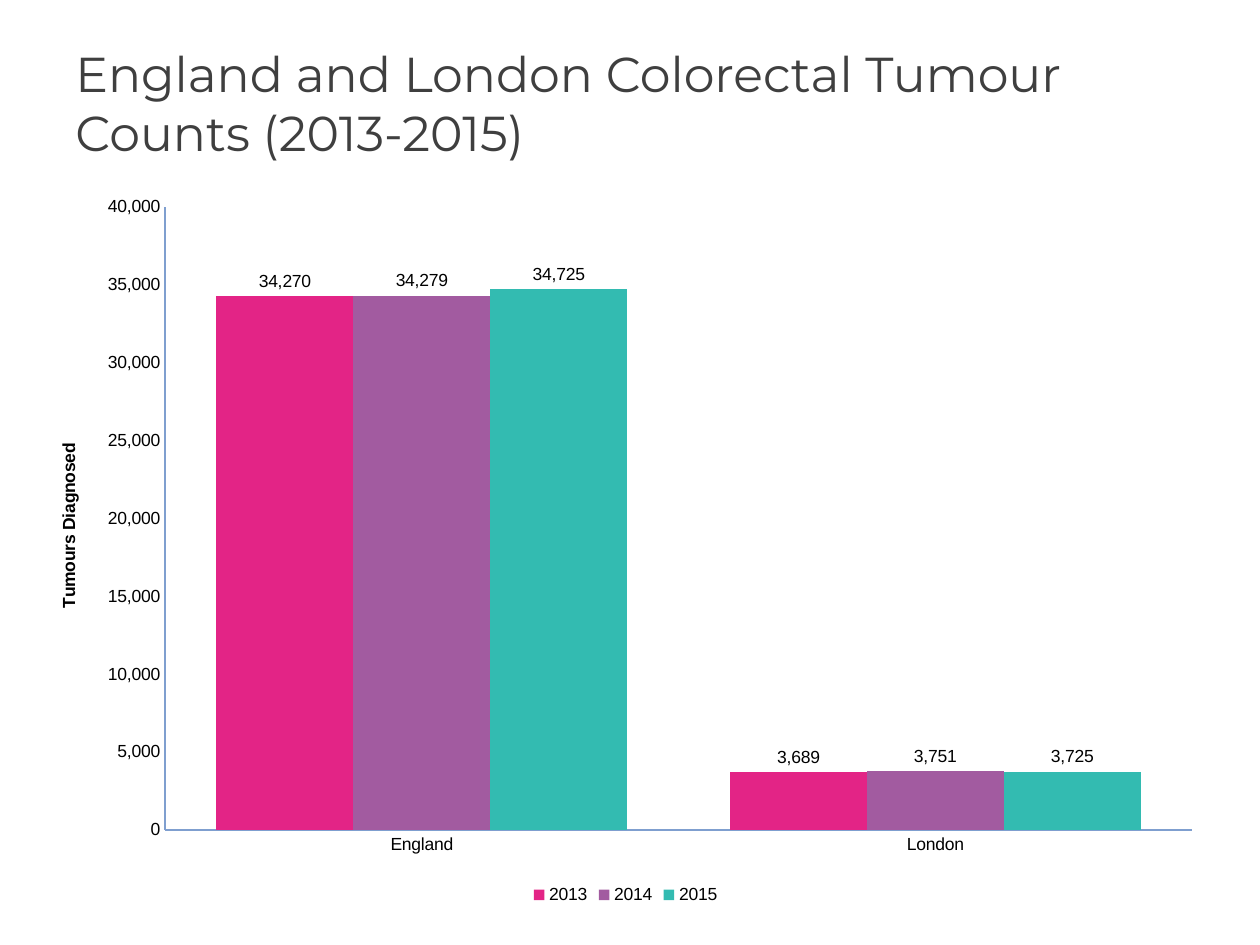
from lxml import etree
from pptx import Presentation
from pptx import util as u
from pptx.chart import data as chart_data
from pptx.dml import color
from pptx.enum import chart as chart_enum, text
from pptx.oxml import ns

TITLE = "England and London Colorectal Tumour Counts (2013-2015)"
AXIS_TITLE = "Tumours Diagnosed"
REGIONS = ["England", "London"]
COUNTS = [
    ("2013", (34270, 3689), "E32486"),
    ("2014", (34279, 3751), "A25BA0"),
    ("2015", (34725, 3725), "33BBB1"),
]
NUMBER_FORMAT = "#,##0"
AXIS_COLOUR = "7F9FCF"
TITLE_BOX = (1.27, 0.76, 22.86, 3.18)
CHART_BOX = (0.71, 3.73, 23.8, 14.61)
PLOT_AREA = {"x": 0.11, "y": 0.03, "w": 0.87, "h": 0.86}  # shares of the chart


def rgb(value):
    return color.RGBColor.from_string(value)


def place(box):
    return [u.Cm(length) for length in box]


def set_all(target, **values):
    for name, value in values.items():
        setattr(target, name, value)


def style_font(font, name, size, colour, bold=False):
    set_all(font, name=name, size=u.Pt(size), bold=bold)
    font.color.rgb = rgb(colour)


def fix_plot_area(chart):
    """Pin the inner plot area with a manual layout."""
    plot_area = chart._chartSpace.chart.plotArea
    for old in plot_area.findall(ns.qn("c:layout")):
        plot_area.remove(old)
    layout = etree.Element(ns.qn("c:layout"))
    manual = etree.SubElement(layout, ns.qn("c:manualLayout"))
    settings = {"layoutTarget": "inner", "xMode": "edge", "yMode": "edge", **PLOT_AREA}
    for tag, value in settings.items():
        etree.SubElement(manual, ns.qn("c:" + tag)).set("val", str(value))
    plot_area.insert(0, layout)


def add_title(slide):
    frame = slide.shapes.add_textbox(*place(TITLE_BOX)).text_frame
    set_all(frame, word_wrap=True, vertical_anchor=text.MSO_ANCHOR.TOP)
    paragraph = frame.paragraphs[0]
    paragraph.space_before = u.Pt(6)
    run = paragraph.add_run()
    run.text = TITLE
    style_font(run.font, "Montserrat", 28, "3F3F3F")


def style_axes(chart):
    for axis in (chart.category_axis, chart.value_axis):
        set_all(axis, has_major_gridlines=False,
                major_tick_mark=chart_enum.XL_TICK_MARK.NONE,
                minor_tick_mark=chart_enum.XL_TICK_MARK.NONE)
        axis.format.line.color.rgb = rgb(AXIS_COLOUR)
        axis.format.line.width = u.Pt(1)
    value_axis = chart.value_axis
    set_all(value_axis, minimum_scale=0, maximum_scale=40000, major_unit=5000)
    set_all(value_axis.tick_labels, number_format=NUMBER_FORMAT,
            number_format_is_linked=False)
    frame = value_axis.axis_title.text_frame
    frame.text = AXIS_TITLE
    style_font(frame.paragraphs[0].runs[0].font, "Arial", 10, "000000", bold=True)


def add_count_chart(slide):
    content = chart_data.CategoryChartData(number_format=NUMBER_FORMAT)
    content.categories = REGIONS
    for year, counts, _ in COUNTS:
        content.add_series(year, counts)
    chart = slide.shapes.add_chart(
        chart_enum.XL_CHART_TYPE.COLUMN_CLUSTERED, *place(CHART_BOX), content).chart
    set_all(chart, has_title=False, has_legend=True)
    style_font(chart.font, "Arial", 10, "000000")
    set_all(chart.legend, position=chart_enum.XL_LEGEND_POSITION.BOTTOM,
            include_in_layout=False)
    style_axes(chart)
    fix_plot_area(chart)

    plot = chart.plots[0]
    set_all(plot, gap_width=75, overlap=0, vary_by_categories=False)
    for series, (_, _, colour) in zip(plot.series, COUNTS):
        series.format.fill.solid()
        series.format.fill.fore_color.rgb = rgb(colour)
        set_all(series.data_labels, show_value=True, number_format=NUMBER_FORMAT,
                number_format_is_linked=False,
                position=chart_enum.XL_LABEL_POSITION.OUTSIDE_END)


def main():
    presentation = Presentation()
    set_all(presentation, slide_width=u.Cm(25.4), slide_height=u.Cm(19.05))
    slide = presentation.slides.add_slide(presentation.slide_layouts[6])
    add_title(slide)
    add_count_chart(slide)
    presentation.save("out.pptx")


if __name__ == "__main__":
    main()
